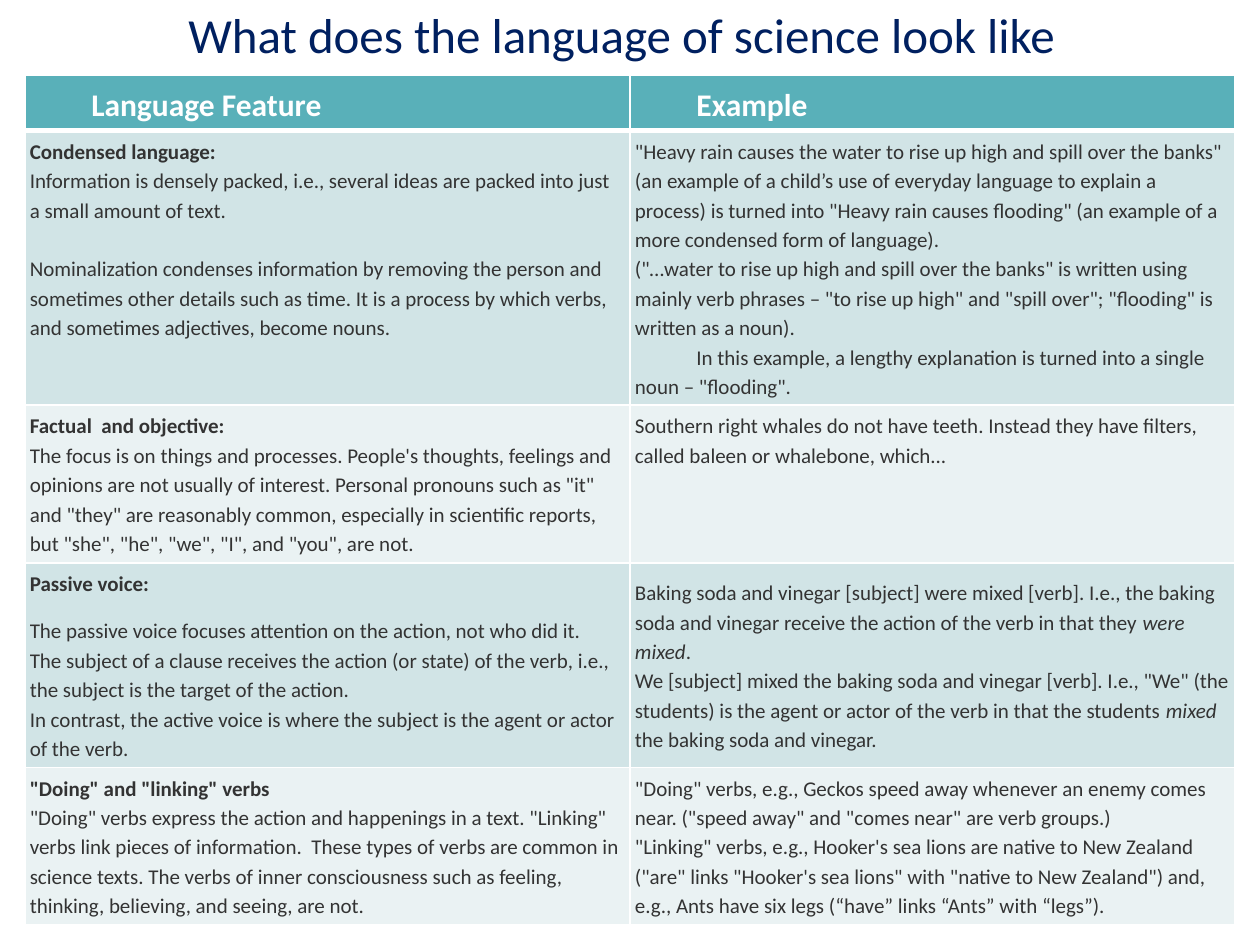
"""Build a slide with a table of the features of scientific language."""
from dataclasses import dataclass

from lxml.etree import SubElement
from pptx import Presentation
from pptx.dml.color import RGBColor as Rgb
from pptx.enum.text import MSO_ANCHOR as Anchor, PP_ALIGN as Align
from pptx.oxml.ns import qn
from pptx.util import Cm, Pt


@dataclass(frozen=True)
class Theme:
    font: str = "Calibri"
    title: str = "002060"
    header: str = "59B0B9"
    bands: tuple = ("D1E4E6", "EAF2F3")
    white: str = "FFFFFF"
    ink: str = "333333"
    title_size: int = 28
    header_size: int = 18
    body_size: int = 12


@dataclass(frozen=True)
class Line:
    spans: tuple
    bold: bool = False
    indent: float = 0
    before: float = 0
    after: float = 0


theme = Theme()
FIRST_INDENT = 1.24


def add_span(para, text, size, color, bold=False, italic=False):
    span = para.add_run()
    span.text = text
    span.font.name = theme.font
    span.font.size = Pt(size)
    span.font.bold = bold
    span.font.italic = italic
    span.font.color.rgb = Rgb.from_string(color)


def add_border(cell, side, width):
    line = SubElement(cell._tc.get_or_add_tcPr(), qn(f"a:ln{side}"), w=str(Pt(width)))
    fill = SubElement(line, qn("a:solidFill"))
    SubElement(fill, qn("a:srgbClr"), val=theme.white)


rows = [
    (1.11, Anchor.MIDDLE, [
        [Line(("Language Feature",), bold=True, indent=FIRST_INDENT)],
        [Line(("Example",), bold=True, indent=FIRST_INDENT)],
    ]),
    (5.51, Anchor.TOP, [
        [
            Line(("Condensed language:",), bold=True),
            Line(("Information is densely packed, i.e., several ideas are packed into just "
                  "a small amount of text.",)),
            Line(("Nominalization condenses information by removing the person and sometimes "
                  "other details such as time. It is a process by which verbs, and sometimes "
                  "adjectives, become nouns.",), before=16.8),
        ],
        [
            Line(('"Heavy rain causes the water to rise up high and spill over the banks" '
                  "(an example of a child’s use of everyday language to explain a process) "
                  'is turned into "Heavy rain causes flooding" (an example of a more '
                  "condensed form of language).",)),
            Line(('("…water to rise up high and spill over the banks" is written using mainly '
                  'verb phrases – "to rise up high" and "spill over"; "flooding" is written '
                  "as a noun).",)),
            Line(("In this example, a lengthy explanation is turned into a single noun – "
                  '"flooding".',), indent=FIRST_INDENT),
        ],
    ]),
    (3.18, Anchor.TOP, [
        [
            Line(("Factual  and objective:",), bold=True),
            Line(("The focus is on things and processes. People's thoughts, feelings and "
                  "opinions are not usually of interest. Personal pronouns such as "
                  '"it" and "they" are reasonably common, especially in scientific reports, '
                  'but "she", "he", "we", "I", and "you", are not.',)),
        ],
        [
            Line(("Southern right whales do not have teeth. Instead they have filters, "
                  "called baleen or whalebone, which...",)),
        ],
    ]),
    (4.12, Anchor.MIDDLE, [
        [
            Line(("Passive voice:",), bold=True, after=10),
            Line(("The passive voice focuses attention on the action, not who did it.",)),
            Line(("The subject of a clause receives the action (or state) of the verb, i.e., "
                  "the subject is the target of the action.",)),
            Line(("In contrast, the active voice is where the subject is the agent or actor "
                  "of the verb.",)),
        ],
        [
            Line(("Baking soda and vinegar [subject] were mixed [verb]. I.e., the baking soda "
                  "and vinegar receive the action of the verb in that they ",
                  "were mixed", ".")),
            Line(("We [subject] mixed the baking soda and vinegar [verb]. I.e., "
                  '"We" (the students) is the agent or actor of the verb in that the '
                  "students ", "mixed", " the baking soda and vinegar.")),
        ],
    ]),
    (3.16, Anchor.MIDDLE, [
        [
            Line(('"Doing" and "linking" verbs',), bold=True),
            Line(('"Doing" verbs express the action and happenings in a text. "Linking" verbs '
                  "link pieces of information.  These types of verbs are common in science "
                  "texts. The verbs of inner consciousness such as feeling, thinking, "
                  "believing, and seeing, are not.",)),
        ],
        [
            Line(('"Doing" verbs, e.g., Geckos speed away whenever an enemy comes near. '
                  '("speed away" and "comes near" are verb groups.)',)),
            Line(('"Linking" verbs, e.g., Hooker\'s sea lions are native to New Zealand '
                  '("are" links "Hooker\'s sea lions" with "native to New Zealand") and, '
                  "e.g., Ants have six legs (“have” links “Ants” with “legs”).",)),
        ],
    ]),
]

deck = Presentation()
deck.slide_width, deck.slide_height = Cm(25.4), Cm(19.05)
page = deck.slides.add_slide(deck.slide_layouts[5])

title = page.shapes.title
title.left, title.top, title.width, title.height = Cm(1.1), Cm(0), Cm(22.86), Cm(1.37)
title.text_frame.vertical_anchor = Anchor.MIDDLE
heading = title.text_frame.paragraphs[0]
heading.alignment = Align.CENTER
add_span(heading, "What does the language of science look like", theme.title_size, theme.title)

table_height = sum(height for height, anchor, cells in rows)
table = page.shapes.add_table(
    len(rows), 2, Cm(0.5), Cm(1.52), Cm(24.4), Cm(table_height)).table

for row_index, (height, anchor, cells) in enumerate(rows):
    table.rows[row_index].height = Cm(height)
    is_header = row_index == 0
    fill = theme.header if is_header else theme.bands[(row_index - 1) % 2]
    size = theme.header_size if is_header else theme.body_size
    color = theme.white if is_header else theme.ink
    for column_index, lines in enumerate(cells):
        cell = table.cell(row_index, column_index)
        cell.vertical_anchor = anchor
        cell.margin_left = cell.margin_right = Cm(0.1)
        cell.margin_top = cell.margin_bottom = Cm(0.1)
        for side in "LRTB":
            meets_header = (side == "B" and is_header) or (side == "T" and row_index == 1)
            add_border(cell, side, 3 if meets_header else 1)
        cell.fill.solid()
        cell.fill.fore_color.rgb = Rgb.from_string(fill)
        for line_index, line in enumerate(lines):
            frame = cell.text_frame
            para = frame.add_paragraph() if line_index else frame.paragraphs[0]
            para.line_spacing = 1.15
            para.space_before, para.space_after = Pt(line.before), Pt(line.after)
            if line.indent:
                para._p.get_or_add_pPr().set("indent", str(Cm(line.indent)))
            for span_index, text in enumerate(line.spans):
                add_span(para, text, size, color, line.bold, italic=span_index % 2 == 1)

deck.save("out.pptx")
